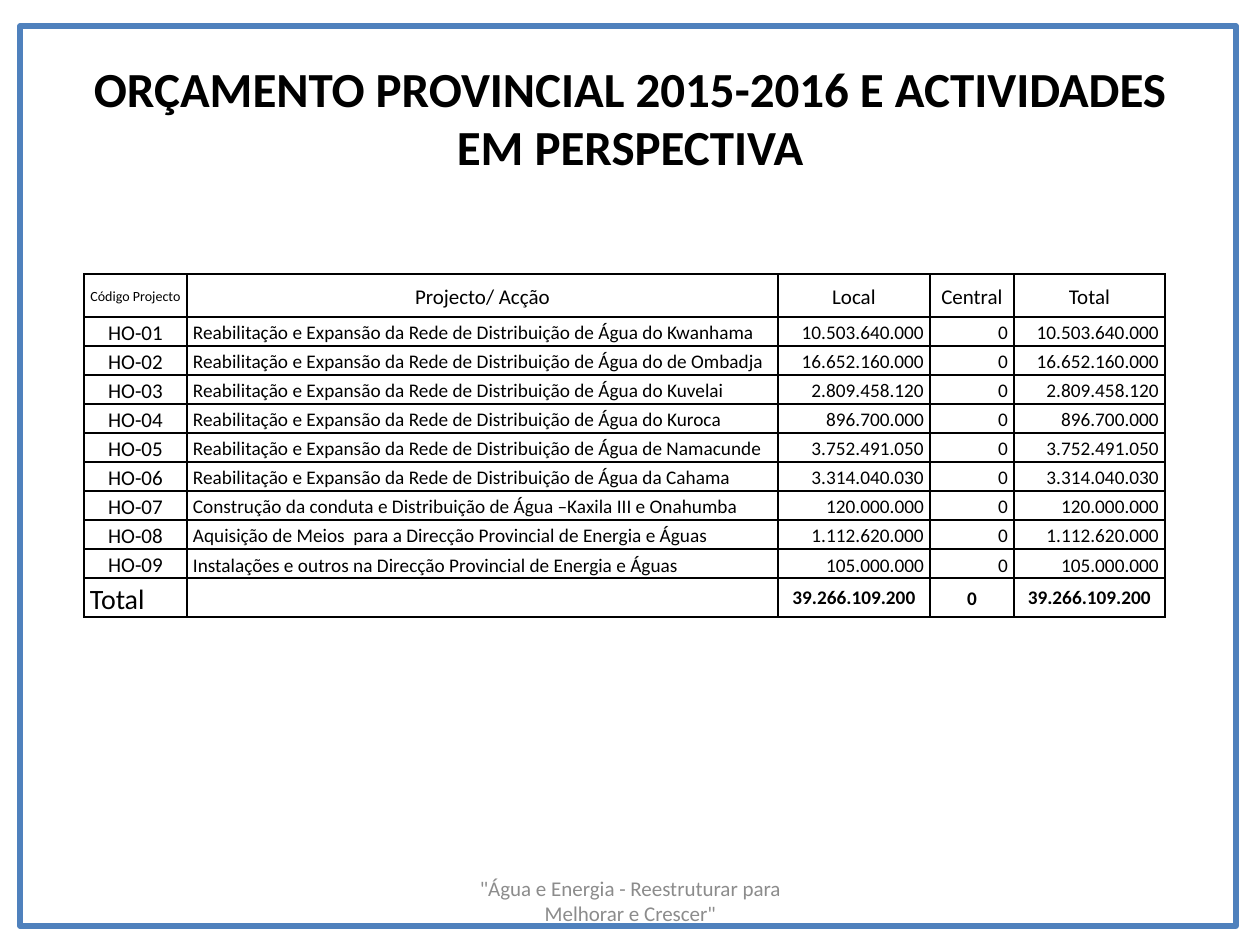
import pptx
import pptx.dml.color
import pptx.enum.shapes
import pptx.enum.text
import pptx.oxml
import pptx.oxml.ns
import pptx.util

SCALE = 914400 / 126
BLACK = pptx.dml.color.RGBColor(0x00, 0x00, 0x00)
GRAY = pptx.dml.color.RGBColor(0x8C, 0x8C, 0x8C)
BLUE = pptx.dml.color.RGBColor(0x4F, 0x81, 0xBD)
ALIGN = pptx.enum.text.PP_ALIGN
ANCHOR = pptx.enum.text.MSO_ANCHOR

HEADINGS = ["Código Projecto", "Projecto/ Acção", "Local", "Central", "Total"]
NETWORK = "Reabilitação e Expansão da Rede de Distribuição de Água "
PROJECTS = [
    (NETWORK + "do Kwanhama", "10.503.640.000"),
    (NETWORK + "do de Ombadja", "16.652.160.000"),
    (NETWORK + "do Kuvelai", "2.809.458.120"),
    (NETWORK + "do Kuroca", "896.700.000"),
    (NETWORK + "de Namacunde", "3.752.491.050"),
    (NETWORK + "da Cahama", "3.314.040.030"),
    ("Construção da conduta e Distribuição de Água –Kaxila III e Onahumba", "120.000.000"),
    ("Aquisição de Meios  para a Direcção Provincial de Energia e Águas", "1.112.620.000"),
    ("Instalações e outros na Direcção Provincial de Energia e Águas", "105.000.000"),
]
GRAND_TOTAL = "39.266.109.200"
COLUMN_WIDTHS = [103, 591, 152, 84, 151]
ROW_HEIGHTS = [43] + [29] * len(PROJECTS) + [39]


def px(length):
    return pptx.util.Emu(round(length * SCALE))


def write(frame, text, size=12, color=BLACK, bold=False, align=ALIGN.CENTER, spacing=None):
    paragraph = frame.paragraphs[0]
    paragraph.alignment = align
    paragraph.line_spacing = spacing
    if text:
        run = paragraph.add_run()
        run.text = text
        run.font.name = "Calibri"
        run.font.size = pptx.util.Pt(size)
        run.font.bold = bold
        run.font.color.rgb = color


def add_title(slide, text):
    title = slide.shapes.title
    title.left, title.top, title.width, title.height = px(63), px(38), px(1134), px(158)
    title.text_frame.vertical_anchor = ANCHOR.MIDDLE
    write(title.text_frame, text, size=28, bold=True)


def add_footer(slide, text):
    footer = slide.shapes.add_textbox(px(431), px(876), px(399), px(50)).text_frame
    footer.word_wrap = True
    footer.vertical_anchor = ANCHOR.MIDDLE
    write(footer, text, color=GRAY)


def add_frame(slide):
    frame = slide.shapes.add_shape(
        pptx.enum.shapes.MSO_SHAPE.RECTANGLE, px(20), px(26), px(1216), px(900))
    frame.shadow.inherit = False
    frame.fill.background()
    frame.line.color.rgb = BLUE
    frame.line.width = pptx.util.Pt(3)


def add_borders(cell):
    properties = cell._tc.get_or_add_tcPr()
    for position, side in enumerate(("lnL", "lnR", "lnT", "lnB")):
        properties.insert(position, pptx.oxml.parse_xml(
            f'<a:{side} {pptx.oxml.ns.nsdecls("a")} w="12700"><a:solidFill>'
            f'<a:srgbClr val="{BLACK}"/></a:solidFill></a:{side}>'))


def fill_cell(cell, text, anchor=ANCHOR.MIDDLE, inset=6, **text_format):
    cell.fill.background()
    add_borders(cell)
    cell.margin_left = cell.margin_right = px(inset)
    cell.margin_top = cell.margin_bottom = 0
    cell.vertical_anchor = anchor
    write(cell.text_frame, text, **text_format)


def budget_rows():
    """Return every table row as a list of (text, format) pairs."""
    loose = {"spacing": 1.15}
    name = {"size": 11, "align": ALIGN.LEFT, **loose}
    amount = {"size": 11, "align": ALIGN.RIGHT, **loose}
    total = {"size": 11, "bold": True}
    rows = [[(heading, {"size": 12 if column else 8, **loose})
             for column, heading in enumerate(HEADINGS)]]
    for number, (project, value) in enumerate(PROJECTS, 1):
        rows.append([(f"HO-{number:02}", loose), (project, name),
                     (value, amount), ("0", amount), (value, amount)])
    rows.append([("Total", {"size": 16, "align": ALIGN.LEFT, "anchor": ANCHOR.BOTTOM, **loose}),
                 ("", {}), (GRAND_TOTAL, {"inset": 1, **total}),
                 ("0", {**total, **loose}), (GRAND_TOTAL, {"inset": 1, **total})])
    return rows


def add_budget(slide):
    budget = slide.shapes.add_table(
        len(ROW_HEIGHTS), len(COLUMN_WIDTHS), px(84), px(274),
        px(sum(COLUMN_WIDTHS)), px(sum(ROW_HEIGHTS))).table
    budget.first_row = budget.horz_banding = False
    for column, width in zip(budget.columns, COLUMN_WIDTHS):
        column.width = px(width)
    for row, height, contents in zip(budget.rows, ROW_HEIGHTS, budget_rows()):
        row.height = px(height)
        for cell, (text, cell_format) in zip(row.cells, contents):
            fill_cell(cell, text, **cell_format)


def main():
    presentation = pptx.Presentation()
    presentation.slide_width, presentation.slide_height = px(1260), px(945)
    slide = presentation.slides.add_slide(presentation.slide_layouts[5])
    add_title(slide, "ORÇAMENTO PROVINCIAL 2015-2016 E ACTIVIDADES EM PERSPECTIVA")
    add_footer(slide, '"Água e Energia - Reestruturar para Melhorar e Crescer"')
    add_budget(slide)
    add_frame(slide)
    presentation.save("out.pptx")


if __name__ == "__main__":
    main()
